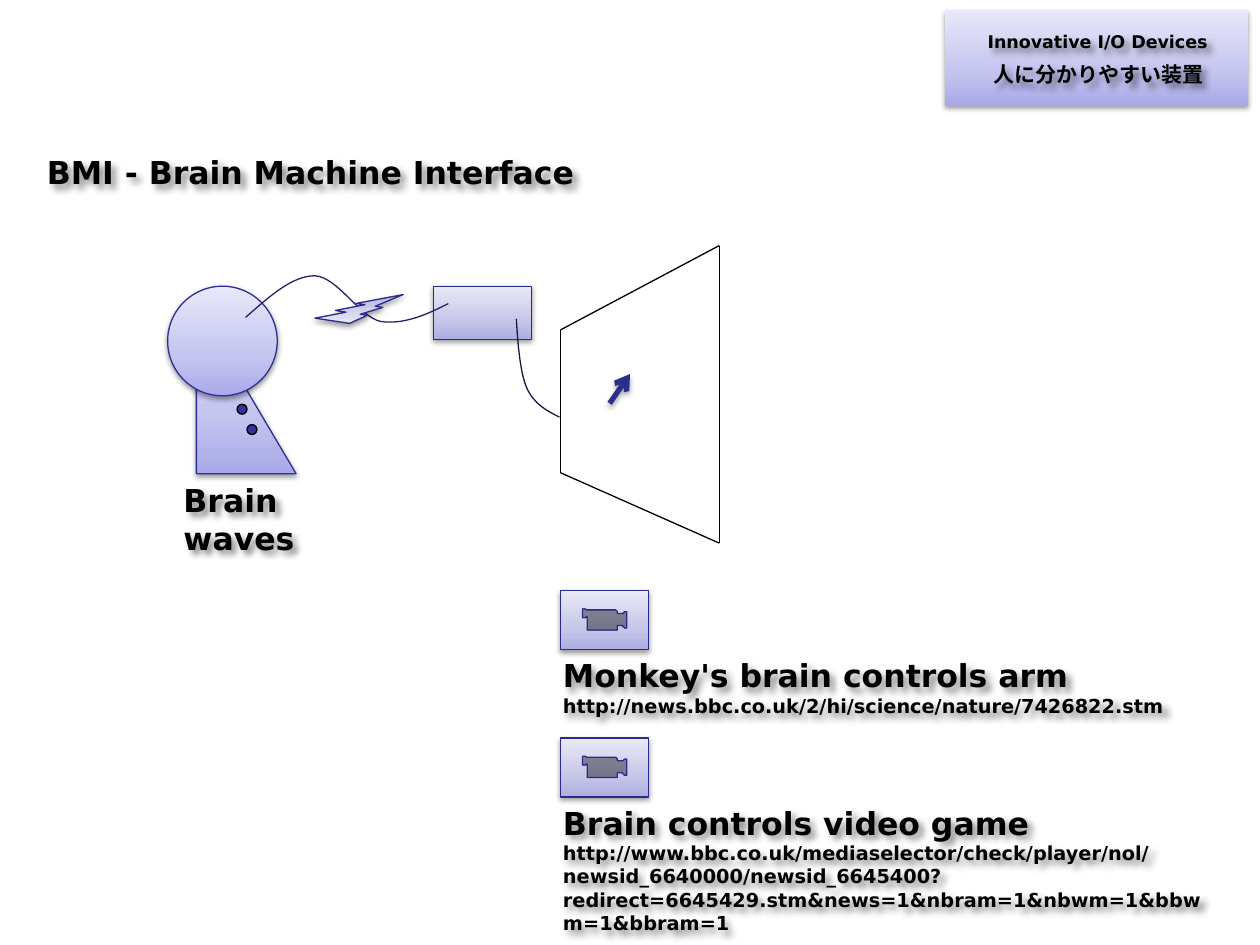
from copy import deepcopy

from lxml.etree import SubElement
from pptx import Presentation
from pptx.dml.color import RGBColor
from pptx.enum.shapes import MSO_CONNECTOR as Link, MSO_SHAPE as Kind
from pptx.enum.text import MSO_ANCHOR as Anchor, MSO_AUTO_SIZE as Auto, PP_ALIGN as Align
from pptx.oxml.ns import qn
from pptx.util import Cm, Pt

FONT = "DejaVu Sans"
BLACK = RGBColor(0x00, 0x00, 0x00)
EYE = RGBColor(0x33, 0x33, 0x99)
EDGE = RGBColor(0x2F, 0x2F, 0x98)
RIM = RGBColor(0x2A, 0x2A, 0x89)
WIRE = RGBColor(0x22, 0x22, 0x67)
CORD = RGBColor(0x17, 0x17, 0x45)
ARROW = RGBColor(0x2D, 0x2D, 0x8A)
# Gradients run from the bottom to the top
STOPS = (0, 0.35, 1)
LILAC = (RGBColor(0xA9, 0xA9, 0xE9), RGBColor(0xC4, 0xC4, 0xEF), RGBColor(0xE8, 0xE8, 0xFA))
STEEL = (RGBColor(0xAD, 0xAD, 0xE1), RGBColor(0xC6, 0xC6, 0xE9), RGBColor(0xE9, 0xE9, 0xF7))


def shade(shape, blur=0.0, dist=0.0, angle=90, alpha=38):
    """Give a shape a soft shadow, or none when blur is zero."""
    props = shape._element.spPr
    for old in props.findall(qn("a:effectLst")):
        props.remove(old)
    effect = SubElement(props, qn("a:effectLst"))
    if blur:
        outer = SubElement(effect, qn("a:outerShdw"), blurRad=str(Pt(blur)),
                           dist=str(Pt(dist)), dir=str(angle * 60000), rotWithShape="0")
        color = SubElement(outer, qn("a:srgbClr"), val=str(BLACK))
        SubElement(color, qn("a:alpha"), val=str(alpha * 1000))


def blend(fill, colors):
    fill.gradient()
    fill.gradient_angle = 90
    first = fill._fill._gradFill.gsLst[0]
    first.addnext(deepcopy(first))
    for stop, color, place in zip(fill.gradient_stops, colors, STOPS):
        stop.color.rgb = color
        stop.position = place


def stroke(line, color, width=0.75):
    line.color.rgb = color
    line.width = Pt(width)


def block(slide, kind, box, colors, edge=None):
    """Add a preset shape with a gradient and a shadow."""
    shape = slide.shapes.add_shape(kind, *map(Cm, box))
    blend(shape.fill, colors)
    if edge is None:
        shape.line.fill.background()
    else:
        stroke(shape.line, edge)
    shade(shape, 3.1, 1.6)
    return shape


def dot(slide, x, y):
    shape = slide.shapes.add_shape(Kind.OVAL, Cm(x), Cm(y), Cm(0.2), Cm(0.2))
    shape.fill.solid()
    shape.fill.fore_color.rgb = EYE
    stroke(shape.line, BLACK)
    shade(shape)


def write(shape, lines, align=Align.LEFT, anchor=Anchor.TOP, space=None):
    """Fill a text shape with (text, size) lines in bold."""
    frame = shape.text_frame
    frame.word_wrap = True
    frame.auto_size = Auto.NONE
    frame.vertical_anchor = anchor
    frame.text = "\n".join(text for text, size in lines)
    for para, (text, size) in zip(frame.paragraphs, lines):
        para.alignment = align
        para.line_spacing = space
        for run in para.runs:
            font = run.font
            font.name, font.size, font.bold = FONT, Pt(size), True
            font.color.rgb = BLACK
    shape.fill.background()
    shade(shape, 4, 3.5, 45, 45)


def label(slide, box, lines, **style):
    write(slide.shapes.add_textbox(*map(Cm, box)), lines, **style)


def curve(slide, points, color):
    """Draw a cubic curve: a start, then three points for each arc."""
    start, *rest = [(Cm(x), Cm(y)) for x, y in points]
    pen = slide.shapes.build_freeform(*start)
    pen.add_line_segments(rest, close=False)
    shape = pen.convert_to_shape()
    route = next(shape._element.iter(qn("a:path")))
    route.set("fill", "none")
    steps = route.findall(qn("a:lnTo"))
    for i in range(0, len(steps), 3):
        arc = SubElement(route, qn("a:cubicBezTo"))
        for step in steps[i:i + 3]:
            arc.append(step[0])
            route.remove(step)
    shape.fill.background()
    stroke(shape.line, color)
    shade(shape)


def link(slide, start, end, color=BLACK, width=0.75):
    line = slide.shapes.add_connector(Link.STRAIGHT, *map(Cm, start + end))
    stroke(line.line, color, width)
    shade(line)
    return line


def clip(slide, y, name, url, height):
    """Add a movie button with its caption below."""
    label(slide, (11.1, y + 1.2, 13.69, height), [(name, 18), (url, 11)])
    block(slide, Kind.ACTION_BUTTON_MOVIE, (11.3, y, 1.78, 1.19), STEEL, RIM)


def person(slide):
    label(slide, (3.45, 9.58, 3.81, 2.57), [("Brain waves", 18)])
    block(slide, Kind.RIGHT_TRIANGLE, (3.96, 6.15, 2.01, 3.4), LILAC, EDGE)
    block(slide, Kind.OVAL, (3.38, 5.77, 2.21, 2.21), LILAC, EDGE)
    dot(slide, 4.78, 8.15)
    dot(slide, 4.98, 8.56)


def device(slide):
    block(slide, Kind.RECTANGLE, (8.74, 5.77, 1.98, 1.07), STEEL, RIM)
    curve(slide, [(4.95, 6.4), (5.44, 5.97), (5.89, 5.56), (6.35, 5.56),
                  (6.81, 5.59), (7.24, 6.38), (7.67, 6.48),
                  (8.13, 6.55), (8.59, 6.35), (9.04, 6.12)], WIRE)
    curve(slide, [(10.41, 6.43), (10.44, 6.96), (10.49, 7.52), (10.62, 7.82),
                  (10.77, 8.15), (11.02, 8.28), (11.28, 8.41)], CORD)
    bolt = block(slide, Kind.LIGHTNING_BOLT, (6.35, 5.94, 1.78, 0.58), STEEL, RIM)
    bolt._element.spPr.xfrm.set("flipV", "1")


def screen(slide):
    ends = [(11.3, 6.65), (14.5, 4.95), (14.5, 10.95), (11.3, 9.53)]
    for start, end in zip(ends, ends[1:] + ends[:1]):
        link(slide, start, end)
    # Pointer on the screen
    arrow = link(slide, (12.29, 8.13), (12.7, 7.54), ARROW, 3)
    SubElement(arrow.line._get_or_add_ln(), qn("a:tailEnd"), type="arrow")
    shade(arrow, 3.1, 1.8, 90, 35)


def main():
    deck = Presentation()
    deck.slide_width, deck.slide_height = Cm(25.4), Cm(19.05)
    slide = deck.slides.add_slide(deck.slide_layouts[5])

    # Title
    title = slide.shapes.title
    title.left, title.top, title.width, title.height = map(Cm, (0.69, 2.95, 14.4, 1.02))
    write(title, [("BMI - Brain Machine Interface", 18)], anchor=Anchor.MIDDLE)

    # Brain to screen
    person(slide)
    device(slide)
    screen(slide)

    # Movies
    clip(slide, 11.91, "Monkey's brain controls arm",
         "http://news.bbc.co.uk/2/hi/science/nature/7426822.stm", 1.5)
    clip(slide, 14.88, "Brain controls video game",
         "http://www.bbc.co.uk/mediaselector/check/player/nol/newsid_6640000/"
         "newsid_6645400?redirect=6645429.stm&news=1&nbram=1&nbwm=1&bbwm=1&bbram=1", 2.44)

    # Topic tag
    block(slide, Kind.RECTANGLE, (19.05, 0.2, 6.12, 1.93), LILAC)
    label(slide, (19.05, 0.51, 6.15, 0.69), [("Innovative I/O Devices", 10)], align=Align.CENTER)
    label(slide, (19.18, 1.22, 5.92, 0.66), [("人に分かりやすい装置", 12)],
          align=Align.CENTER, space=0.8)

    deck.save("out.pptx")


if __name__ == "__main__":
    main()
